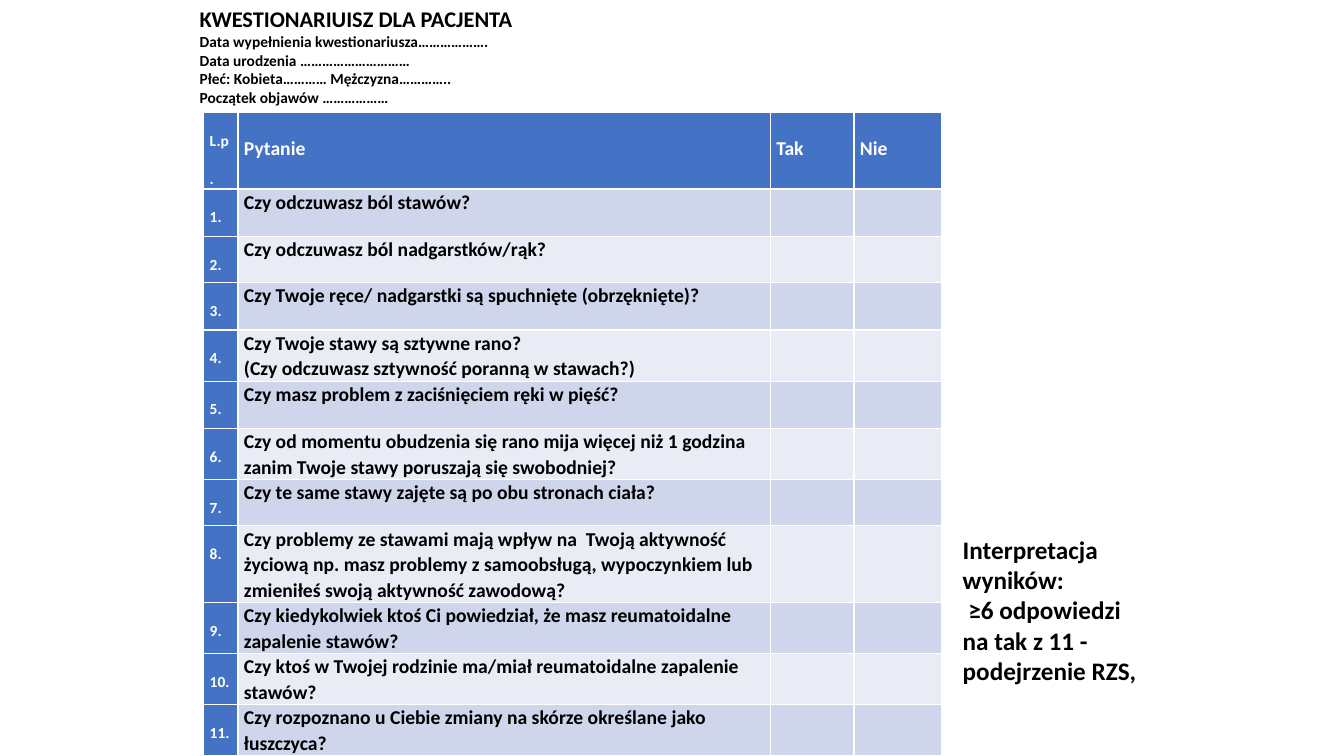
from dataclasses import dataclass

from pptx import Presentation
from pptx.dml.color import RGBColor as Rgb
from pptx.enum.text import MSO_ANCHOR as Anchor, MSO_AUTO_SIZE as Fit, PP_ALIGN as Align
from pptx.util import Inches, Pt

COLORS = {"head": "4472C4", "odd": "CFD5EA", "even": "E9EBF5", "light": "FFFFFF", "dark": "000000"}
WIDTHS = [0.34, 5.28, 0.83, 0.87]
HEADS = ["L.p.", "Pytanie", "Tak", "Nie"]


@dataclass
class Query:
    text: str
    height: float = 0.47


@dataclass
class Line:
    text: str
    size: int = 11


QUERIES = [
    Query("Czy odczuwasz ból stawów?"),
    Query("Czy odczuwasz ból nadgarstków/rąk?", 0.46),
    Query("Czy Twoje ręce/ nadgarstki są spuchnięte (obrzęknięte)?"),
    Query("Czy Twoje stawy są sztywne rano? \n(Czy odczuwasz sztywność poranną w stawach?)"),
    Query("Czy masz problem z zaciśnięciem ręki w pięść?"),
    Query("Czy od momentu obudzenia się rano mija więcej niż 1 godzina "
          "zanim Twoje stawy poruszają się swobodniej?"),
    Query("Czy te same stawy zajęte są po obu stronach ciała?", 0.46),
    Query("Czy problemy ze stawami mają wpływ na  Twoją aktywność życiową np. masz problemy "
          "z samoobsługą, wypoczynkiem lub zmieniłeś swoją aktywność zawodową?", 0.73),
    Query("Czy kiedykolwiek ktoś Ci powiedział, że masz reumatoidalne zapalenie stawów?"),
    Query("Czy ktoś w Twojej rodzinie ma/miał reumatoidalne zapalenie stawów?"),
    Query("Czy rozpoznano u Ciebie zmiany na skórze określane jako łuszczyca?"),
]
INTRO = [
    Line("KWESTIONARIUISZ DLA PACJENTA", 16),
    Line("Data wypełnienia kwestionariusza……………….\nData urodzenia …………………………"),
    Line("Płeć: Kobieta………… Mężczyzna………….."),
    Line("Początek objawów ………………"),
]
NOTE = Line("Interpretacja wyników:\n ≥6 odpowiedzi na tak z 11 - podejrzenie RZS,", 18)


def write(para, line: Line, color: str = "dark", space: float = 1.0) -> None:
    """Write bold text into a paragraph, breaking at line ends."""
    para.alignment = Align.LEFT
    para.line_spacing = space
    for i, part in enumerate(line.text.split("\n")):
        if i:
            para.add_line_break()
        run = para.add_run()
        run.text = part
        font = run.font
        font.name, font.size, font.bold = "Calibri", Pt(line.size), True
        font.color.rgb = Rgb.from_string(COLORS[color])


def style(cell, row: int, col: int) -> None:
    """Set margins and fill of a cell."""
    cell.margin_left = cell.margin_right = Inches(0.06)
    cell.margin_top = cell.margin_bottom = 0
    shade = "head" if row == 0 or col == 0 else "odd" if row % 2 else "even"
    cell.fill.solid()
    cell.fill.fore_color.rgb = Rgb.from_string(COLORS[shade])


def add_grid(slide) -> None:
    """Draw the table of questions."""
    highs = [0.51] + [q.height for q in QUERIES]
    grid = slide.shapes.add_table(len(highs), len(WIDTHS), Inches(2.02), Inches(1.12),
                                  Inches(sum(WIDTHS)), Inches(sum(highs))).table
    for col, wide in zip(grid.columns, WIDTHS):
        col.width = Inches(wide)
    texts = [HEADS] + [[f"{i}.", q.text, "", ""] for i, q in enumerate(QUERIES, 1)]
    for r, (high, row) in enumerate(zip(highs, texts)):
        grid.rows[r].height = Inches(high)
        for c, text in enumerate(row):
            cell = grid.cell(r, c)
            style(cell, r, c)
            if text:
                label = r == 0 or c == 0
                write(cell.text_frame.paragraphs[0], Line(text, 14 if c else 11),
                      "light" if label else "dark", 2.0 if label else 1.07)


def add_title(slide) -> None:
    """Fill the title with the patient's details."""
    title = slide.shapes.title
    title.left, title.top = Inches(1.88), Inches(0)
    title.width, title.height = Inches(8.57), Inches(1.11)
    frame = title.text_frame
    frame.auto_size, frame.word_wrap = Fit.NONE, True
    frame.vertical_anchor = Anchor.MIDDLE
    for i, line in enumerate(INTRO):
        para = frame.add_paragraph() if i else frame.paragraphs[0]
        para.space_before = Pt(0)
        write(para, line)


def add_note(slide) -> None:
    """Place the reading of the score beside the table."""
    box = slide.shapes.add_textbox(Inches(9.45), Inches(5.25), Inches(1.99), Inches(1.62))
    box.text_frame.word_wrap = True
    write(box.text_frame.paragraphs[0], NOTE)


def main() -> None:
    """Build and save the slide."""
    deck = Presentation()
    deck.slide_width, deck.slide_height = Inches(13.33), Inches(7.5)
    slide = deck.slides.add_slide(deck.slide_layouts[5])
    add_grid(slide)
    add_title(slide)
    add_note(slide)
    deck.save("out.pptx")


if __name__ == "__main__":
    main()
